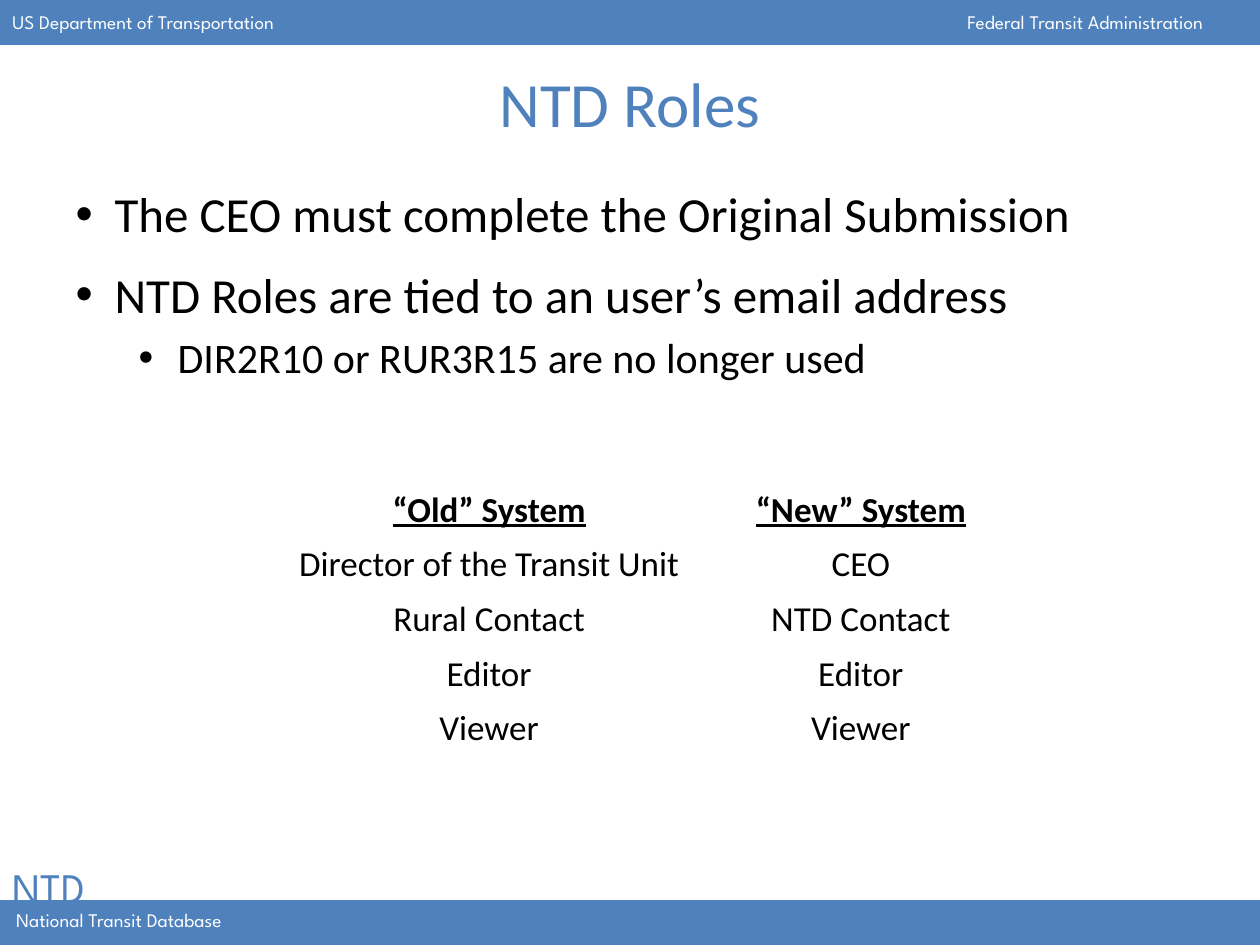
import dataclasses

import pptx
import pptx.dml.color
import pptx.enum.shapes
import pptx.enum.text
import pptx.oxml
import pptx.oxml.ns
import pptx.util

BLUE = pptx.dml.color.RGBColor(0x4F, 0x81, 0xBD)
WHITE = pptx.dml.color.RGBColor(0xFF, 0xFF, 0xFF)
BLACK = pptx.dml.color.RGBColor(0x00, 0x00, 0x00)
BODY_FONT = "Calibri"
BAND_FONT = "League Spartan"
CENTER = pptx.enum.text.PP_ALIGN.CENTER
MIDDLE = pptx.enum.text.MSO_ANCHOR.MIDDLE
TOP = pptx.enum.text.MSO_ANCHOR.TOP
SLIDE_W = pptx.util.Inches(10)
SLIDE_H = pptx.util.Inches(7.5)
BAND_H = 0.34 / 7.5


@dataclasses.dataclass(frozen=True)
class Box:
    """Left, top, width and height as shares of the slide."""
    x: float
    y: float
    w: float
    h: float

    def emu(self) -> tuple:
        return (round(self.x * SLIDE_W), round(self.y * SLIDE_H),
                round(self.w * SLIDE_W), round(self.h * SLIDE_H))


@dataclasses.dataclass(frozen=True)
class Label:
    text: str
    box: Box
    size: float = 11
    color: pptx.dml.color.RGBColor = WHITE


@dataclasses.dataclass(frozen=True)
class Bullet:
    text: str
    size: float
    level: int
    indent: float
    before: float


BANDS = [Box(0, 1 - BAND_H, 1, BAND_H), Box(0, 0, 1, BAND_H)]
LABELS = [
    Label("NTD", Box(0, 6.79 / 7.5, 0.125, 0.5 / 7.5), 24, BLUE),
    Label("National Transit Database", Box(0.003, 7.16 / 7.5, 0.229, 0.29 / 7.5)),
    Label("US Department of Transportation", Box(0, 0.03 / 7.5, 0.268, 0.29 / 7.5)),
    Label("Federal Transit Administration", Box(0.758, 0.03 / 7.5, 0.268, 0.29 / 7.5)),
]
TITLE_BOX = Box(0.05, 0.04, 0.9, 1.03 / 7.5)
BODY_BOX = Box(0.05, 1.41 / 7.5, 0.9, 5.29 / 7.5)
BULLETS = [
    Bullet("The CEO must complete the Original Submission", 28, 0, 0.31, 5.6),
    Bullet("NTD Roles are tied to an user’s email address", 28, 0, 0.31, 12.5),
    Bullet("DIR2R10 or RUR3R15 are no longer used", 24, 1, 0.81, 4.8),
]
HANGING = 0.31
TABLE_BOX = Box(0.2, 3.83 / 7.5, 0.59, 2.17 / 7.5)
COLUMN_SHARES = [0.638, 0.362]
ROLES = [
    ("“Old” System", "“New” System"),
    ("Director of the Transit Unit", "CEO"),
    ("Rural Contact", "NTD Contact"),
    ("Editor", "Editor"),
    ("Viewer", "Viewer"),
]


def write(p, text: str, *, size: float, color=BLACK, font: str = BODY_FONT,
          align=None, bold: bool = False, underline: bool = False) -> None:
    p.alignment = align
    r = p.add_run()
    r.text = text
    r.font.size = pptx.util.Pt(size)
    r.font.name = font
    r.font.color.rgb = color
    r.font.bold = bold
    r.font.underline = underline


def place(sp, box: Box) -> None:
    sp.left, sp.top, sp.width, sp.height = box.emu()


def draw_band(s, box: Box) -> None:
    sp = s.shapes.add_shape(pptx.enum.shapes.MSO_SHAPE.RECTANGLE, *box.emu())
    sp.shadow.inherit = False
    sp.fill.solid()
    sp.fill.fore_color.rgb = BLUE
    sp.line.color.rgb = BLUE
    sp.line.width = pptx.util.Pt(2)


def draw_label(s, label: Label) -> None:
    tf = s.shapes.add_textbox(*label.box.emu()).text_frame
    tf.word_wrap = True
    write(tf.paragraphs[0], label.text, size=label.size, color=label.color,
          font=BAND_FONT)


def fill_title(sp, text: str) -> None:
    place(sp, TITLE_BOX)
    tf = sp.text_frame
    tf.auto_size = pptx.enum.text.MSO_AUTO_SIZE.NONE
    tf.vertical_anchor = MIDDLE
    write(tf.paragraphs[0], text, size=36, color=BLUE, align=CENTER)


def fill_body(sp, bullets: list[Bullet]) -> None:
    place(sp, BODY_BOX)
    tf = sp.text_frame
    tf.auto_size = pptx.enum.text.MSO_AUTO_SIZE.NONE
    tf.vertical_anchor = TOP
    for i, bullet in enumerate(bullets):
        p = tf.add_paragraph() if i else tf.paragraphs[0]
        p.level = bullet.level
        p.space_before = pptx.util.Pt(bullet.before)
        write(p, bullet.text, size=bullet.size)
        p_pr = p._p.get_or_add_pPr()
        p_pr.set("marL", str(pptx.util.Inches(bullet.indent)))
        p_pr.set("indent", str(-pptx.util.Inches(HANGING)))
        p_pr.append(pptx.oxml.parse_xml(
            f'<a:buChar {pptx.oxml.ns.nsdecls("a")} char="•"/>'))


def draw_table(s, rows: list[tuple[str, str]]) -> None:
    frame = s.shapes.add_table(len(rows), len(COLUMN_SHARES), *TABLE_BOX.emu())
    table = frame.table
    table.first_row = False
    table.horz_banding = False
    for column, share in zip(table.columns, COLUMN_SHARES):
        column.width = round(share * TABLE_BOX.w * SLIDE_W)
    for i, row in enumerate(rows):
        for j, text in enumerate(row):
            cell = table.cell(i, j)
            cell.fill.background()
            write(cell.text_frame.paragraphs[0], text, size=20, align=CENTER,
                  bold=i == 0, underline=i == 0)


def main() -> None:
    prs = pptx.Presentation()
    prs.slide_width, prs.slide_height = SLIDE_W, SLIDE_H
    s = prs.slides.add_slide(prs.slide_layouts[1])
    for band in BANDS:
        draw_band(s, band)
    for label in LABELS:
        draw_label(s, label)
    fill_title(s.shapes.title, "NTD Roles")
    fill_body(s.placeholders[1], BULLETS)
    draw_table(s, ROLES)
    prs.save("out.pptx")


if __name__ == "__main__":
    main()
